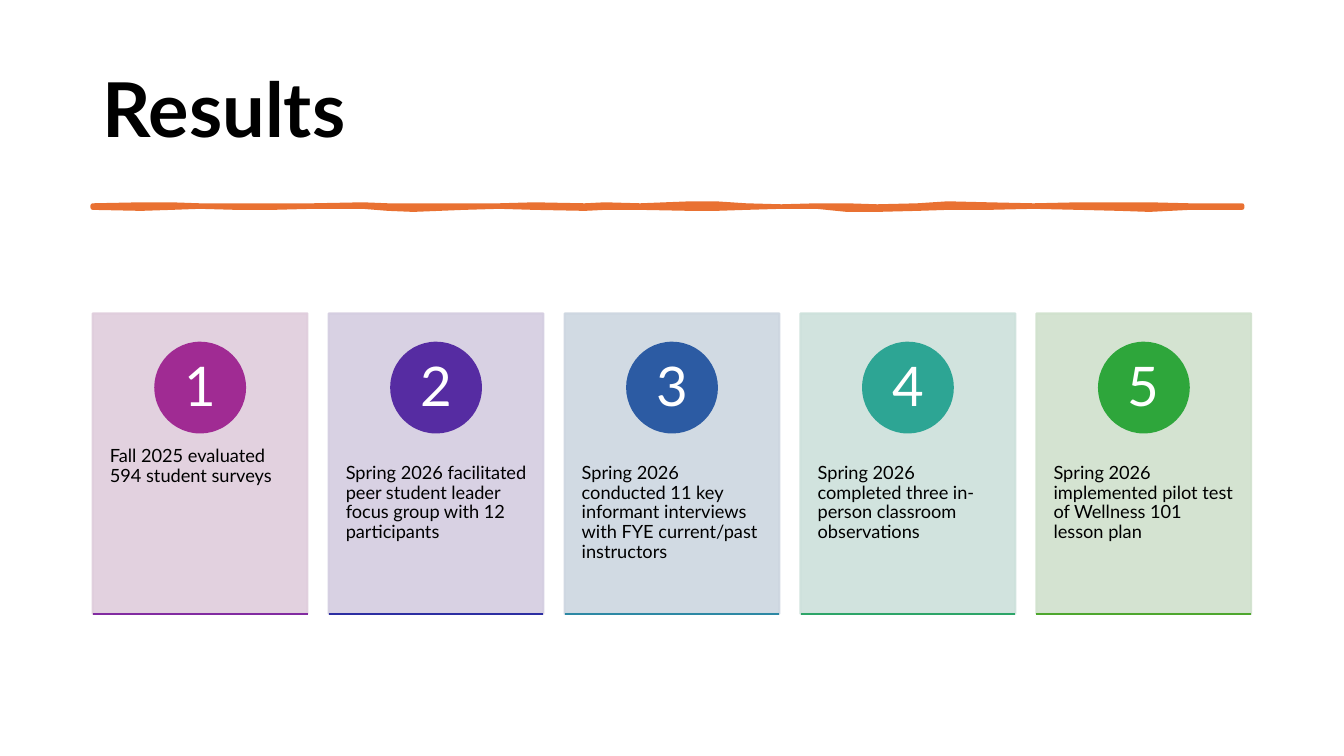
from dataclasses import dataclass
from lxml.etree import SubElement
from pptx import Presentation
from pptx.dml.color import RGBColor
from pptx.enum.shapes import MSO_CONNECTOR, MSO_SHAPE
from pptx.enum.text import MSO_ANCHOR, PP_ALIGN
from pptx.oxml.ns import qn
from pptx.util import Inches, Pt


@dataclass(frozen=True)
class Theme:
    font: str = "Lato"
    ink: str = "000000"
    white: str = "FFFFFF"
    accent: str = "E97132"
    title: float = 54
    digit: float = 39
    body: float = 13
    line: float = 1.5
    brush: float = 3.25


CARDS = [
    ("Fall 2025 evaluated 594 student surveys", "DFCDDC", "A02B93", "822BA1"),
    ("Spring 2026 facilitated peer student leader focus group with 12 participants",
     "D4CDE0", "562CA2", "2C2EA2"),
    ("Spring 2026 conducted 11 key informant interviews with FYE current/past instructors",
     "CDD6E0", "2C5BA3", "2D88A4"),
    ("Spring 2026 completed three in-person classroom observations",
     "CDE1DB", "2DA594", "2DA568"),
    ("Spring 2026 implemented pilot test of Wellness 101 lesson plan",
     "D0E1CD", "2EA63B", "4EA72E"),
]

STROKE = [
    (0.92, 2.04, 2.06), (1.4, 2.03, 2.07), (1.7, 2.03, 2.06), (1.98, 2.04, 2.05),
    (2.35, 2.04, 2.06), (2.7, 2.04, 2.06), (3.1, 2.04, 2.05), (3.6, 2.03, 2.05),
    (3.85, 2.04, 2.07), (4.1, 2.04, 2.08), (4.6, 2.04, 2.06), (4.95, 2.04, 2.05),
    (5.3, 2.03, 2.06), (5.8, 2.04, 2.07), (6.0, 2.03, 2.06), (6.35, 2.04, 2.06),
    (6.85, 2.02, 2.07), (7.1, 2.02, 2.07), (7.4, 2.04, 2.06), (7.75, 2.05, 2.05),
    (8.1, 2.04, 2.05), (8.4, 2.04, 2.08), (8.7, 2.05, 2.08), (9.1, 2.04, 2.07),
    (9.4, 2.02, 2.06), (9.8, 2.03, 2.06), (10.25, 2.04, 2.05), (10.7, 2.03, 2.06),
    (11.1, 2.03, 2.07), (11.4, 2.03, 2.08), (11.8, 2.04, 2.06), (12.32, 2.04, 2.06),
]


def write(frame, text, *, size, font, color, bold=False, align=PP_ALIGN.LEFT,
          anchor=MSO_ANCHOR.TOP, pad=(0.1, 0.05)):
    frame.word_wrap = True
    frame.vertical_anchor = anchor
    frame.margin_left = frame.margin_right = Inches(pad[0])
    frame.margin_top = frame.margin_bottom = Inches(pad[1])
    para = frame.paragraphs[0]
    para.alignment = align
    para.line_spacing = 0.9
    run = para.add_run()
    run.text = text
    run.font.name = font
    run.font.size = Pt(size)
    run.font.bold = bold
    run.font.color.rgb = RGBColor.from_string(color)


class Deck:
    def __init__(self, theme):
        self.theme = theme
        self.prs = Presentation()
        self.prs.slide_width = Inches(13.33)
        self.prs.slide_height = Inches(7.5)
        self.slide = self.prs.slides.add_slide(self.prs.slide_layouts[5])
        self.shapes = self.slide.shapes

    def paint(self, shape, color, width, alpha=None):
        shape.shadow.inherit = False
        shape.fill.solid()
        shape.fill.fore_color.rgb = RGBColor.from_string(color)
        shape.line.color.rgb = RGBColor.from_string(color)
        shape.line.width = Pt(width)
        if alpha:
            for node in shape.fill._xPr.iter(qn("a:srgbClr")):
                SubElement(node, qn("a:alpha")).set("val", str(alpha * 1000))

    def title(self, text, *box):
        shape = self.shapes.title
        shape.left, shape.top, shape.width, shape.height = map(Inches, box)
        write(shape.text_frame, text, size=self.theme.title, font=self.theme.font,
              color=self.theme.ink, bold=True, anchor=MSO_ANCHOR.MIDDLE)

    def brush(self, stroke):
        top = [(Inches(x), Inches(y)) for x, y, _ in stroke]
        base = [(Inches(x), Inches(y)) for x, _, y in reversed(stroke)]
        path = self.shapes.build_freeform(*top[0], scale=1.0)
        path.add_line_segments(top[1:] + base, close=True)
        self.paint(path.convert_to_shape(), self.theme.accent, self.theme.brush)

    def shape(self, kind, color, *box, alpha=None):
        shape = self.shapes.add_shape(kind, *map(Inches, box))
        self.paint(shape, color, self.theme.line, alpha)

    def text(self, text, *box, **style):
        frame = self.shapes.add_textbox(*map(Inches, box)).text_frame
        write(frame, text, font=self.theme.font, **style)

    def rule(self, color, left, top, width):
        ends = map(Inches, (left, top, left + width, top))
        line = self.shapes.add_connector(MSO_CONNECTOR.STRAIGHT, *ends)
        line.line.color.rgb = RGBColor.from_string(color)
        line.line.width = Pt(self.theme.line)
        SubElement(line._element.spPr, qn("a:effectLst"))

    def card(self, index, text, tint, disc, edge):
        width, top, height = 2.13, 3.11, 2.98
        left = 0.92 + index * 2.34
        self.shape(MSO_SHAPE.RECTANGLE, tint, left, top, width, height, alpha=90)
        self.text(text, left, 4.24, width, 1.79, size=self.theme.body,
                  color=self.theme.ink, pad=(0.17, 0.36))
        self.shape(MSO_SHAPE.OVAL, disc, left + 0.62, 3.4, 0.89, 0.89)
        self.text(str(index + 1), left + 0.75, 3.54, 0.63, 0.63,
                  size=self.theme.digit, color=self.theme.white,
                  align=PP_ALIGN.CENTER, anchor=MSO_ANCHOR.MIDDLE, pad=(0.07, 0.01))
        self.rule(edge, left, top + height, width)


def main():
    deck = Deck(Theme())
    deck.title("Results", 0.92, 0.4, 11.5, 1.45)
    deck.brush(STROKE)
    for index, card in enumerate(CARDS):
        deck.card(index, *card)
    deck.prs.save("out.pptx")


if __name__ == "__main__":
    main()
